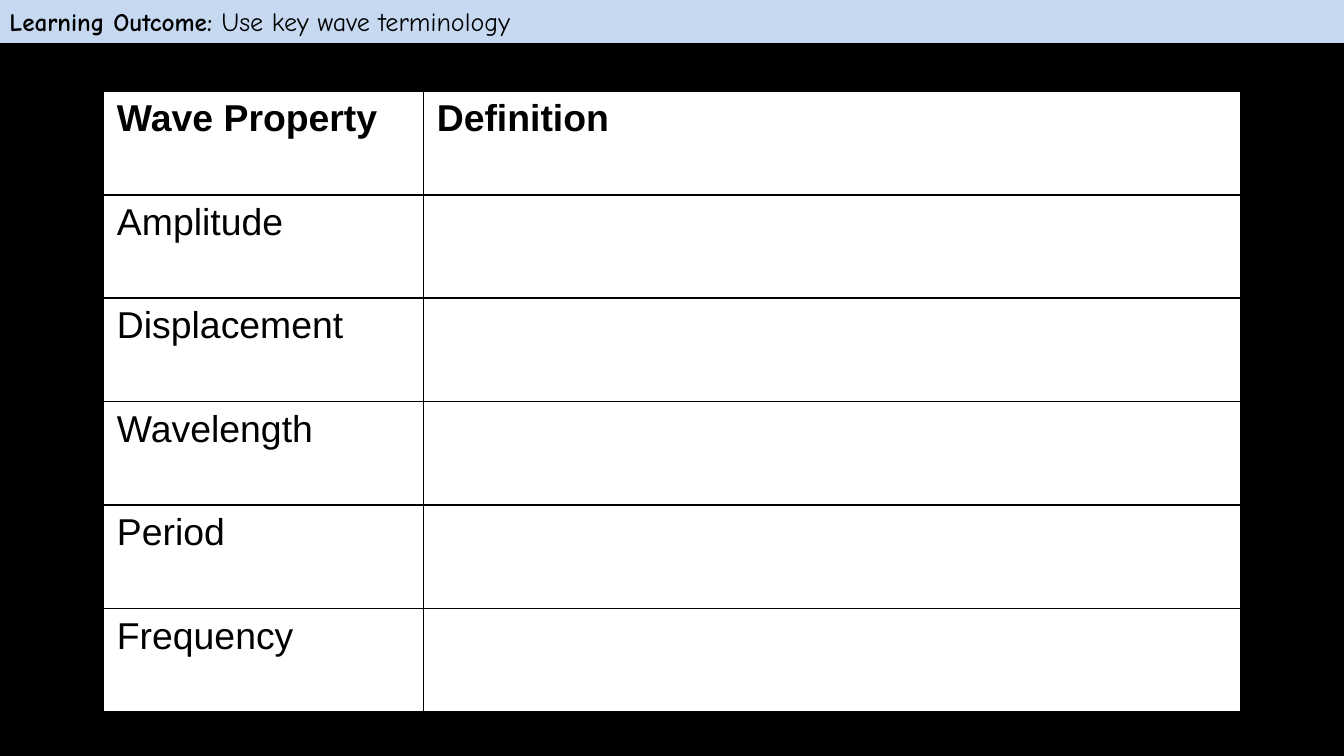
import pptx
import pptx.dml.color
import pptx.enum.text
import pptx.oxml
import pptx.oxml.ns
import pptx.util
from pptx.util import Inches

BLACK = pptx.dml.color.RGBColor(0x00, 0x00, 0x00)
WHITE = pptx.dml.color.RGBColor(0xFF, 0xFF, 0xFF)
PALE_BLUE = pptx.dml.color.RGBColor(0xC6, 0xD9, 0xF1)

TITLE_ONLY = 5
PROPERTIES = ["Amplitude", "Displacement", "Wavelength", "Period", "Frequency"]


class SlideBuilder:
    banner_font = "Comic Neue"
    table_font = "Arial"
    table_size = 20
    border_width = 1

    def __init__(self, presentation):
        layout = presentation.slide_layouts[TITLE_ONLY]
        self.slide = presentation.slides.add_slide(layout)
        self.slide.background.fill.solid()
        self.slide.background.fill.fore_color.rgb = BLACK

    def style(self, font, name, size, bold):
        font.name = name
        font.size = pptx.util.Pt(size)
        font.bold = bold
        font.color.rgb = BLACK

    def banner(self, label, outcome, width, height):
        title = self.slide.shapes.title
        title.left = title.top = 0
        title.width, title.height = width, height
        title.fill.solid()
        title.fill.fore_color.rgb = PALE_BLUE
        frame = title.text_frame
        frame.auto_size = pptx.enum.text.MSO_AUTO_SIZE.NONE
        frame.word_wrap = True
        frame.vertical_anchor = pptx.enum.text.MSO_ANCHOR.MIDDLE
        frame.margin_left = frame.margin_right = Inches(0.07)
        frame.margin_top = frame.margin_bottom = Inches(0.04)
        paragraph = frame.paragraphs[0]
        paragraph.alignment = pptx.enum.text.PP_ALIGN.LEFT
        for text, size, bold in ((label, 13.5, True), (outcome, 14, False)):
            run = paragraph.add_run()
            run.text = text
            self.style(run.font, self.banner_font, size, bold)

    def border(self, cell):
        properties = cell._tc.get_or_add_tcPr()
        width = pptx.util.Pt(self.border_width)
        for index, side in enumerate(("lnL", "lnR", "lnT", "lnB")):
            line = pptx.oxml.parse_xml(
                f'<a:{side} {pptx.oxml.ns.nsdecls("a")} w="{width}">'
                f'<a:solidFill><a:srgbClr val="{BLACK}"/></a:solidFill>'
                f"</a:{side}>"
            )
            properties.insert(index, line)

    def table(self, rows, left, top, column_widths, row_height):
        table = self.slide.shapes.add_table(
            len(rows), len(column_widths), left, top,
            sum(column_widths), row_height * len(rows),
        ).table
        for column, width in zip(table.columns, column_widths):
            column.width = width
        for row_index, texts in enumerate(rows):
            table.rows[row_index].height = row_height
            for column_index, text in enumerate(texts):
                cell = table.cell(row_index, column_index)
                cell.text = text
                cell.fill.solid()
                cell.fill.fore_color.rgb = WHITE
                font = cell.text_frame.paragraphs[0].font
                self.style(font, self.table_font, self.table_size, row_index == 0)
                self.border(cell)


def main():
    presentation = pptx.Presentation()
    presentation.slide_width = Inches(10)
    presentation.slide_height = presentation.slide_width * 9 // 16
    builder = SlideBuilder(presentation)
    builder.banner(
        "Learning Outcome: ", "Use key wave terminology",
        presentation.slide_width, Inches(0.32),
    )
    rows = [("Wave Property", "Definition")]
    rows += [(name, "") for name in PROPERTIES]
    builder.table(
        rows, Inches(0.77), Inches(0.68),
        (Inches(2.38), Inches(6.08)), Inches(0.77),
    )
    presentation.save("out.pptx")


if __name__ == "__main__":
    main()
